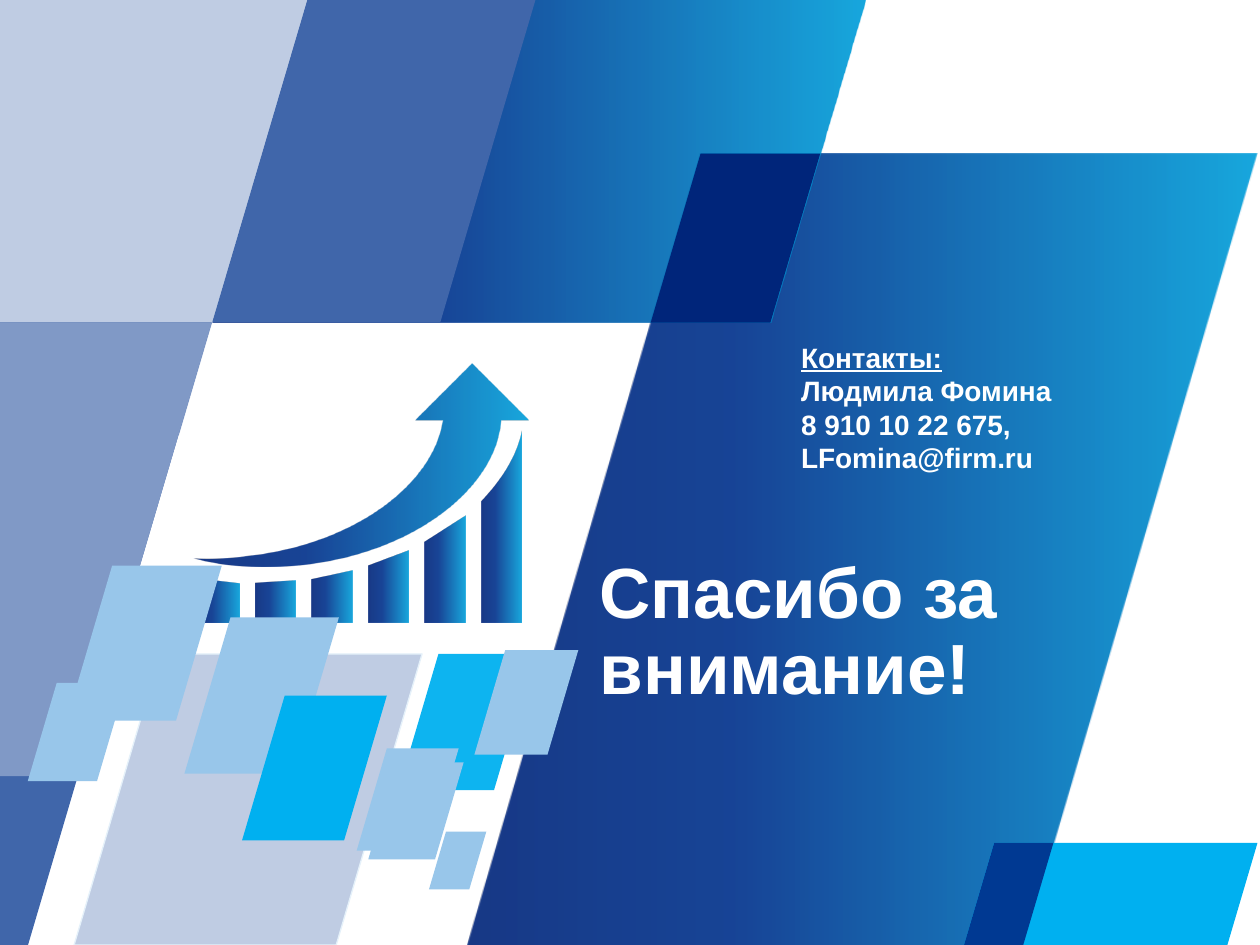
from typing import NamedTuple

from lxml.etree import SubElement
from pptx import Presentation
from pptx.dml.color import RGBColor
from pptx.enum.text import MSO_ANCHOR as Anchor, MSO_AUTO_SIZE as AutoSize, PP_ALIGN as Align
from pptx.oxml.ns import qn
from pptx.util import Inches, Pt

COLORS = {
    "navy": "00257A", "blue": "00338D", "azure": "009FDA", "cyan": "00B0F0",
    "sky": "98C6EA", "pale": "BFCCE3", "steel": "4066AA", "lilac": "8099C6",
    "ice": "E5F1FA", "white": "FFFFFF",
}
GRADIENT = [(0, "navy"), (35, "blue"), (100, "azure")]
SLANT = 0.295
BAR_LEFT, BAR_STEP, BAR_WIDTH, BAR_BOTTOM = 1.58, 0.448, 0.32, 4.94

Point = tuple[float, float]


class Panel(NamedTuple):
    left: float
    top: float
    width: float
    height: float
    fill: str
    opacity: int = 100
    outline: str = ""
    flush_left: bool = False


class Bar(NamedTuple):
    left_top: float
    right_top: float
    bow: float = 0


PANELS = [
    Panel(5.56, 1.22, 4.42, 6.28, "gradient"),
    Panel(7.89, 6.69, 2.09, 0.81, "cyan"),
    Panel(1.27, 5.19, 2.08, 2.31, "pale", outline="ice"),
    Panel(2.44, 0, 4.43, 2.56, "gradient"),
    Panel(0, 0, 2.44, 3.45, "pale", flush_left=True),
    Panel(0, 2.56, 1.68, 4.94, "steel", flush_left=True),
    Panel(7.89, 6.69, 0.47, 0.81, "blue", opacity=95),
    Panel(5.56, 1.22, 0.95, 1.34, "navy"),
    Panel(3.48, 5.19, 0.76, 1.08, "cyan", opacity=95),
    Panel(2.44, 0, 1.81, 2.56, "steel"),
    Panel(0, 2.56, 1.68, 3.6, "lilac", flush_left=True),
]
TILES = [
    Panel(1.83, 4.9, 0.86, 1.24, "sky"),
    Panel(0.45, 5.42, 0.55, 0.78, "sky"),
    Panel(3.54, 6.6, 0.32, 0.46, "sky"),
    Panel(3.15, 6.05, 0.53, 0.77, "sky"),
    Panel(3.07, 5.94, 0.57, 0.81, "sky"),
    Panel(4.01, 5.16, 0.58, 0.83, "sky"),
    Panel(0.89, 4.49, 0.87, 1.23, "sky"),
    Panel(2.26, 5.52, 0.81, 1.15, "cyan"),
]
BARS = [
    Bar(4.59, 4.63), Bar(4.63, 4.61), Bar(4.6, 4.53),
    Bar(4.49, 4.37), Bar(4.3, 4.09), Bar(3.98, 3.42, bow=0.07),
]
CONTACTS = ["Контакты:", "Людмила Фомина", "8 910 10 22 675,", "LFomina@firm.ru"]


def curve(start: Point, first: Point, second: Point, end: Point, steps: int = 24) -> list[Point]:
    points = []
    for step in range(steps + 1):
        t = step / steps
        weights = ((1 - t) ** 3, 3 * t * (1 - t) ** 2, 3 * t * t * (1 - t), t ** 3)
        corners = (start, first, second, end)
        points.append(tuple(sum(w * c[axis] for w, c in zip(weights, corners)) for axis in (0, 1)))
    return points


def set_opacity(color_element, percent: int) -> None:
    SubElement(color_element, qn("a:alpha")).set("val", str(percent * 1000))


def fill_gradient(shape) -> None:
    shape.fill.gradient()
    shape.fill.gradient_angle = 0
    stops = shape._element.spPr.find(qn("a:gradFill")).find(qn("a:gsLst"))
    for stop in list(stops):
        stops.remove(stop)
    for position, name in GRADIENT:
        stop = SubElement(stops, qn("a:gs"))
        stop.set("pos", str(position * 1000))
        color = SubElement(stop, qn("a:srgbClr"))
        color.set("val", COLORS[name])
        set_opacity(color, 90)


def draw_outline(page, points: list[Point], fill: str, opacity: int = 100, outline: str = "") -> None:
    corners = [(Inches(x), Inches(y)) for x, y in points]
    builder = page.shapes.build_freeform(*corners[0])
    builder.add_line_segments(corners[1:], close=True)
    shape = builder.convert_to_shape()
    shape.shadow.inherit = False
    if fill == "gradient":
        fill_gradient(shape)
    else:
        shape.fill.solid()
        shape.fill.fore_color.rgb = RGBColor.from_string(COLORS[fill])
        if opacity < 100:
            set_opacity(shape._element.spPr.find(qn("a:solidFill"))[0], opacity)
    if outline:
        shape.line.color.rgb = RGBColor.from_string(COLORS[outline])
        shape.line.width = Pt(0.75)
    else:
        shape.line.fill.background()


def draw_panel(page, panel: Panel) -> None:
    right, bottom = panel.left + panel.width, panel.top + panel.height
    shift = SLANT * panel.height
    bottom_left = panel.left if panel.flush_left else panel.left - shift
    points = [(panel.left, panel.top), (right, panel.top), (right - shift, bottom), (bottom_left, bottom)]
    draw_outline(page, points, panel.fill, panel.opacity, panel.outline)


def draw_arrow(page) -> None:
    points = [(3.97, 3.34), (4.19, 3.34), (3.74, 2.89), (3.29, 3.34)]
    points += curve((3.51, 3.34), (3.43, 3.86), (2.79, 4.32), (1.98, 4.41))
    points += curve((1.98, 4.41), (1.82, 4.43), (1.68, 4.44), (1.54, 4.43))
    points += curve((1.54, 4.43), (1.8, 4.5), (2.11, 4.52), (2.43, 4.48))
    points += curve((2.43, 4.48), (3.28, 4.38), (3.93, 3.88), (3.97, 3.34))
    draw_outline(page, points, "gradient")


def draw_bar(page, index: int, bar: Bar) -> None:
    left = BAR_LEFT + index * BAR_STEP
    right = left + BAR_WIDTH
    drop = (bar.left_top - bar.right_top) / 3
    top_edge = curve(
        (right, bar.right_top),
        (right - BAR_WIDTH / 3 + bar.bow, bar.right_top + drop),
        (left + BAR_WIDTH / 3 + bar.bow, bar.left_top - drop),
        (left, bar.left_top),
    )
    draw_outline(page, [(left, BAR_BOTTOM), (right, BAR_BOTTOM)] + top_edge, "gradient")


def write_text(para, text: str, *, size: float, underline: bool = False, spacing: float = 1.0) -> None:
    para.alignment = Align.LEFT
    para.line_spacing = spacing
    span = para.add_run()
    span.text = text
    font = span.font
    font.name, font.size, font.bold, font.underline = "Arial", Pt(size), True, underline
    font.color.rgb = RGBColor.from_string(COLORS["white"])


def place_title(page) -> None:
    title = page.shapes.title
    title.left, title.top, title.width, title.height = map(Inches, (4.76, 4.42, 4.56, 1.89))
    frame = title.text_frame
    frame.margin_left = frame.margin_right = frame.margin_top = frame.margin_bottom = 0
    frame.word_wrap = True
    frame.auto_size = AutoSize.NONE
    frame.vertical_anchor = Anchor.TOP
    write_text(frame.paragraphs[0], "Спасибо за внимание!", size=40.6, spacing=0.9)
    page.shapes._spTree.append(title._element)


def place_contacts(page) -> None:
    box = page.shapes.add_textbox(*map(Inches, (6.26, 2.65, 3.7, 1.18)))
    frame = box.text_frame
    frame.word_wrap = True
    for index, line in enumerate(CONTACTS):
        para = frame.add_paragraph() if index else frame.paragraphs[0]
        write_text(para, line, size=16, underline=index == 0)


def main() -> None:
    deck = Presentation()
    deck.slide_width, deck.slide_height = Inches(10), Inches(7.5)
    page = deck.slides.add_slide(deck.slide_layouts[5])
    for panel in PANELS:
        draw_panel(page, panel)
    draw_arrow(page)
    for index, bar in enumerate(BARS):
        draw_bar(page, index, bar)
    place_title(page)
    for tile in TILES:
        draw_panel(page, tile)
    place_contacts(page)
    deck.save("out.pptx")


if __name__ == "__main__":
    main()
